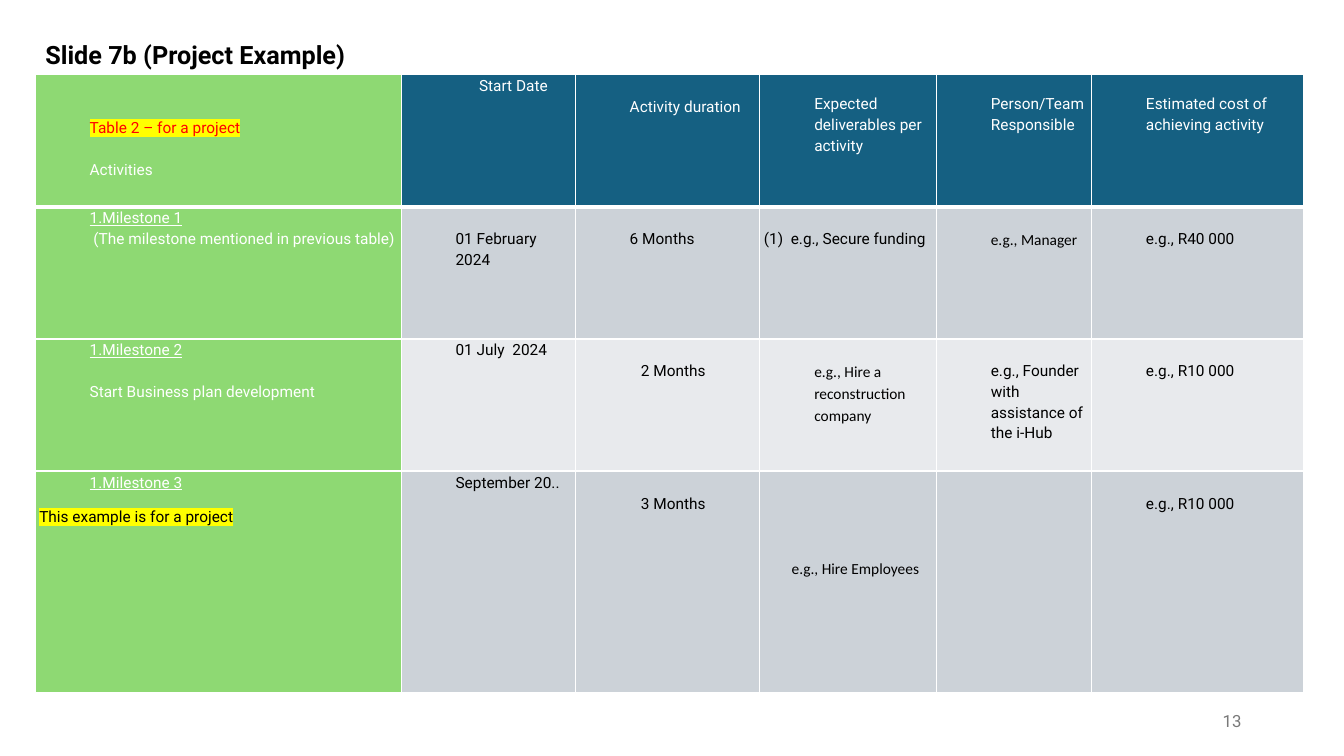
from dataclasses import dataclass
from typing import Any, Optional

from lxml.etree import SubElement
from pptx import Presentation
from pptx.dml.color import RGBColor as RGB
from pptx.enum.text import MSO_ANCHOR as ANCHOR, MSO_AUTO_SIZE as AUTO, PP_ALIGN as ALIGN
from pptx.oxml.ns import qn
from pptx.util import Cm, Pt

WHITE = RGB(0xFF, 0xFF, 0xFF)
BLACK = RGB(0x00, 0x00, 0x00)
RED = RGB(0xFF, 0x00, 0x00)
YELLOW = RGB(0xFF, 0xFF, 0x00)
GREEN = RGB(0x8E, 0xD9, 0x73)
TEAL = RGB(0x15, 0x60, 0x82)
BAND_DARK = RGB(0xCC, 0xD2, 0xD8)
BAND_LIGHT = RGB(0xE8, 0xEA, 0xED)
GREY = RGB(0x79, 0x79, 0x79)

LINE = 15
INDENT = 1.27
COL_WIDTHS = (9.22, 4.39, 4.65, 4.45, 3.91, 5.33)
ROW_HEIGHTS = (3.33, 3.33, 3.33, 5.59)
BODY_FILLS = (BAND_DARK, BAND_LIGHT, BAND_DARK)
CELL_FORMAT = {"margin_left": Cm(0.1), "margin_right": Cm(0.1), "margin_bottom": 0}


@dataclass
class Para:
    text: str
    before: float = 0
    indent: float = INDENT
    font: str = "Roboto"
    color: Optional[RGB] = None
    highlight: Optional[RGB] = None
    underline: bool = False
    align: ALIGN = ALIGN.LEFT


@dataclass
class Entry:
    paras: list[Para]
    lead: float = 0


def entry(text: str, lead: float = LINE, **kw: Any) -> Entry:
    return Entry([Para(text, **kw)], lead)


def milestone(number: int, *details: Para) -> Entry:
    return Entry([Para(f"1.Milestone {number}", underline=True), *details])


ROWS = [
    [
        Entry([Para("Table 2 – for a project", color=RED, highlight=YELLOW),
               Para("Activities", before=LINE)], 2 * LINE),
        entry("Start Date", 0, align=ALIGN.CENTER),
        entry("Activity duration"),
        entry("Expected deliverables per activity", 13),
        entry("Person/Team Responsible", 13),
        entry("Estimated cost of achieving activity", 13),
    ],
    [
        milestone(1, Para(" (The milestone mentioned in previous table)")),
        entry("01 February 2024"),
        entry("6 Months"),
        entry("(1)  e.g., Secure funding", indent=0),
        entry("e.g., Manager", font="Calibri"),
        entry("e.g., R40 000"),
    ],
    [
        milestone(2, Para("Start Business plan development", before=LINE)),
        entry("01 July  2024", 0),
        entry("2 Months", indent=1.55),
        entry("e.g., Hire a reconstruction company", font="Calibri"),
        entry("e.g., Founder with assistance of the i-Hub"),
        entry("e.g., R10 000"),
    ],
    [
        milestone(3, Para("This example is for a project", before=10, indent=0,
                          color=BLACK, highlight=YELLOW)),
        entry("September 20..", 0),
        entry("3 Months", indent=1.55),
        entry("e.g., Hire Employees", 61, indent=0.7, font="Calibri"),
        None,
        entry("e.g., R10 000"),
    ],
]


def apply(obj: Any, values: dict[str, Any]) -> None:
    for name, value in values.items():
        setattr(obj, name, value)


def solid(parent: Any, color: RGB) -> None:
    SubElement(SubElement(parent, qn("a:solidFill")), qn("a:srgbClr"), val=str(color))


def add_borders(cell: Any, bottom: float) -> None:
    tc_pr = cell._tc.get_or_add_tcPr()
    widths = {"lnL": 1, "lnR": 1, "lnT": 1, "lnB": bottom}
    for i, (tag, width) in enumerate(widths.items()):
        ln = SubElement(tc_pr, qn(f"a:{tag}"), w=str(Pt(width)))
        solid(ln, WHITE)
        tc_pr.insert(i, ln)


def write_para(p: Any, para: Para, color: RGB) -> None:
    apply(p, {"alignment": para.align, "line_spacing": 1.15,
              "space_before": Pt(para.before)})
    p._p.get_or_add_pPr().set("marL", str(Cm(para.indent)))
    r = p.add_run()
    r.text = para.text
    apply(r.font, {"name": para.font, "size": Pt(11), "bold": False,
                   "underline": para.underline})
    r.font.color.rgb = para.color or color
    if para.highlight:
        r_pr = r._r.get_or_add_rPr()
        mark = SubElement(r_pr, qn("a:highlight"))
        SubElement(mark, qn("a:srgbClr"), val=str(para.highlight))
        r_pr.find(qn("a:solidFill")).addnext(mark)


def write_cell(cell: Any, item: Optional[Entry], fill: RGB, color: RGB, bottom: float) -> None:
    apply(cell, CELL_FORMAT)
    cell.margin_top = Pt(item.lead) if item else 0
    cell.fill.solid()
    cell.fill.fore_color.rgb = fill
    add_borders(cell, bottom)
    tf = cell.text_frame
    for i, para in enumerate(item.paras if item else []):
        p = tf.add_paragraph() if i else tf.paragraphs[0]
        write_para(p, para, color)


def add_activity_table(s: Any) -> None:
    frame = s.shapes.add_table(len(ROW_HEIGHTS), len(COL_WIDTHS), Cm(0.89), Cm(1.88),
                               Cm(sum(COL_WIDTHS)), Cm(sum(ROW_HEIGHTS)))
    table = frame.table
    apply(table, {"first_row": False, "horz_banding": False})
    for column, width in zip(table.columns, COL_WIDTHS):
        column.width = Cm(width)
    for row, height in zip(table.rows, ROW_HEIGHTS):
        row.height = Cm(height)
    for i, items in enumerate(ROWS):
        for j, item in enumerate(items):
            fill = GREEN if j == 0 else TEAL if i == 0 else BODY_FILLS[i - 1]
            color = WHITE if i == 0 or j == 0 else BLACK
            write_cell(table.cell(i, j), item, fill, color, 3 if i == 0 else 1)


def write_line(sp: Any, text: str, align: ALIGN, color: RGB, font: dict[str, Any]) -> None:
    tf = sp.text_frame
    apply(tf, {"word_wrap": True, "auto_size": AUTO.NONE, "vertical_anchor": ANCHOR.MIDDLE})
    p = tf.paragraphs[0]
    p.alignment = align
    r = p.add_run()
    r.text = text
    apply(r.font, {"name": "Roboto", **font})
    r.font.color.rgb = color


def main() -> None:
    prs = Presentation()
    apply(prs, {"slide_width": Cm(33.87), "slide_height": Cm(19.05)})
    s = prs.slides.add_slide(prs.slide_layouts[5])
    title = s.shapes.title
    apply(title, {"left": Cm(0.89), "top": Cm(0.85), "width": Cm(9.5), "height": Cm(1.03)})
    write_line(title, "Slide 7b (Project Example)", ALIGN.LEFT, BLACK,
               {"size": Pt(18), "bold": True})
    add_activity_table(s)
    number = s.shapes.add_textbox(Cm(23.92), Cm(17.66), Cm(7.62), Cm(1.01))
    write_line(number, "13", ALIGN.RIGHT, GREY, {"size": Pt(12)})
    prs.save("out.pptx")


if __name__ == "__main__":
    main()
